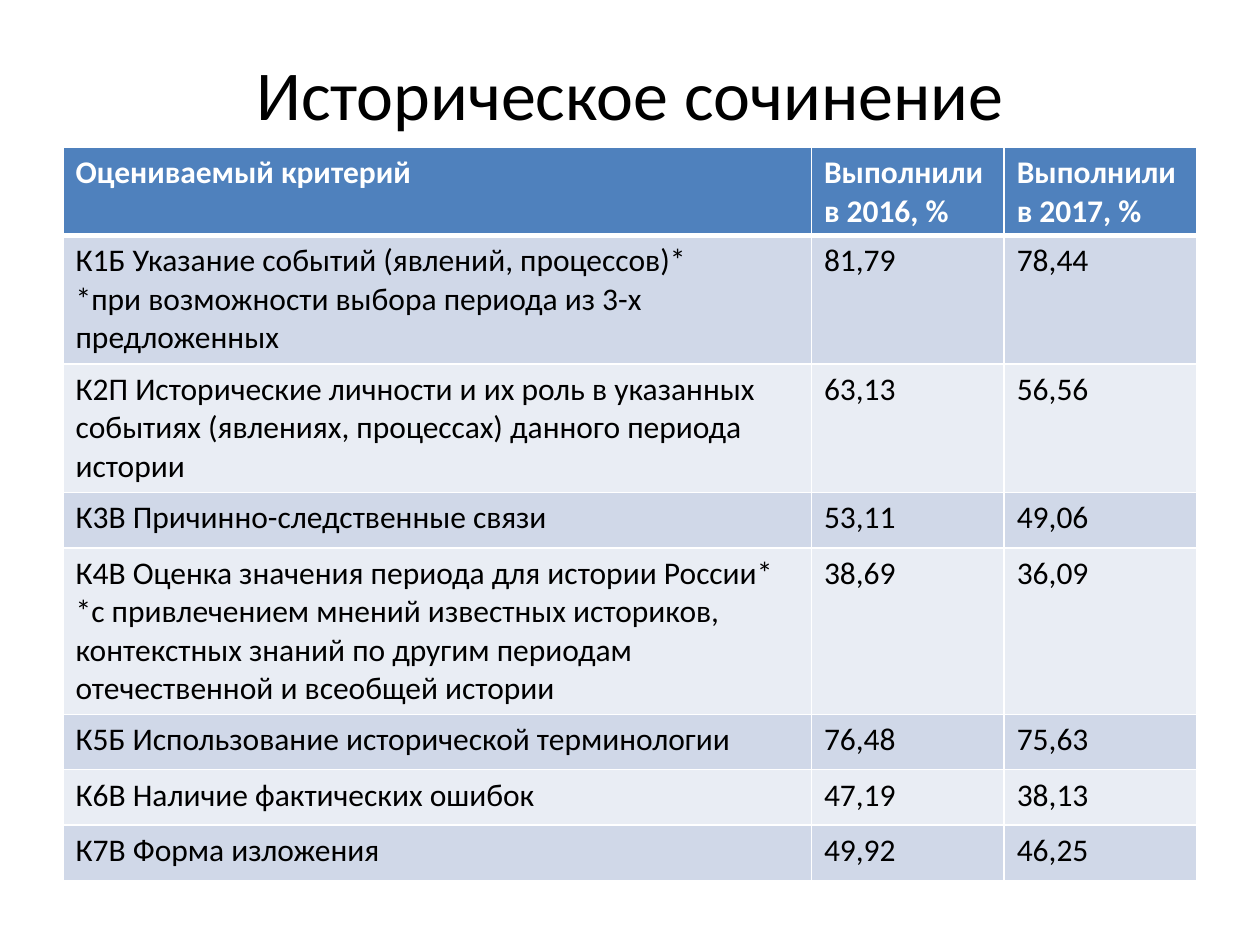
from dataclasses import dataclass

from lxml import etree
from pptx import Presentation
from pptx.dml.color import RGBColor
from pptx.enum import text
from pptx.oxml import ns
from pptx.util import Inches, Pt


@dataclass(frozen=True)
class Theme:
    font: str = "Calibri"
    title_size: int = 40
    table_size: int = 18
    dark: str = "000000"
    light: str = "FFFFFF"
    header: str = "4F81BD"
    bands: tuple = ("D0D8E8", "E9EDF4")


THEME = Theme()

HEADER = ("Оцениваемый критерий", "Выполнили в 2016, %", "Выполнили в 2017, %")
CRITERIA = [
    ("К1Б Указание событий (явлений, процессов)*\n"
     "*при возможности выбора периода из 3-х предложенных", "81,79", "78,44"),
    ("К2П Исторические личности и их роль в указанных событиях "
     "(явлениях, процессах) данного периода истории", "63,13", "56,56"),
    ("К3В Причинно-следственные связи", "53,11", "49,06"),
    ("К4В Оценка значения периода для истории России*\n"
     "*с привлечением мнений известных историков, контекстных знаний "
     "по другим периодам отечественной и всеобщей истории", "38,69", "36,09"),
    ("К5Б Использование исторической терминологии", "76,48", "75,63"),
    ("К6В Наличие фактических ошибок", "47,19", "38,13"),
    ("К7В Форма изложения", "49,92", "46,25"),
]
COLUMN_WIDTHS = (5.94, 1.53, 1.53)
ROW_HEIGHTS = (0.7, 1.02, 1.02, 0.44, 1.32, 0.44, 0.44, 0.44)


def style_text(frame, size, color, bold=False):
    for para in frame.paragraphs:
        para.font.name = THEME.font
        para.font.size = Pt(size)
        para.font.bold = bold
        para.font.color.rgb = RGBColor.from_string(color)


def add_borders(cell, bottom_width):
    """Rule all four sides; borders must come before the fill in tcPr."""
    properties = cell._tc.get_or_add_tcPr()
    widths = {"a:lnL": 1, "a:lnR": 1, "a:lnT": 1, "a:lnB": bottom_width}
    for position, (side, width) in enumerate(widths.items()):
        line = etree.Element(ns.qn(side), w=str(Pt(width)))
        fill = etree.SubElement(line, ns.qn("a:solidFill"))
        etree.SubElement(fill, ns.qn("a:srgbClr"), val=THEME.light)
        properties.insert(position, line)


deck = Presentation()
deck.slide_width, deck.slide_height = Inches(10), Inches(7.5)
page = deck.slides.add_slide(deck.slide_layouts[6])

title = page.shapes.add_textbox(Inches(0.5), Inches(0.3), Inches(9), Inches(0.87)).text_frame
title.word_wrap = True
title.vertical_anchor = text.MSO_ANCHOR.MIDDLE
title.text = "Историческое сочинение"
title.paragraphs[0].alignment = text.PP_ALIGN.CENTER
style_text(title, THEME.title_size, THEME.dark)

rows = [HEADER, *CRITERIA]
table = page.shapes.add_table(
    len(rows), len(HEADER), Inches(0.5), Inches(1.17),
    Inches(sum(COLUMN_WIDTHS)), Inches(sum(ROW_HEIGHTS))).table
for column, width in zip(table.columns, COLUMN_WIDTHS):
    column.width = Inches(width)
for row, height in zip(table.rows, ROW_HEIGHTS):
    row.height = Inches(height)

for r, values in enumerate(rows):
    is_header = r == 0
    fill_color = THEME.header if is_header else THEME.bands[(r - 1) % 2]
    text_color = THEME.light if is_header else THEME.dark
    for c, value in enumerate(values):
        cell = table.cell(r, c)
        cell.text = value
        style_text(cell.text_frame, THEME.table_size, text_color, is_header)
        cell.fill.solid()
        cell.fill.fore_color.rgb = RGBColor.from_string(fill_color)
        add_borders(cell, bottom_width=3 if is_header else 1)

# The first body row shares the header's thick rule.
for c in range(len(HEADER)):
    top = table.cell(1, c)._tc.tcPr.find(ns.qn("a:lnT"))
    top.set("w", str(Pt(3)))

deck.save("out.pptx")
